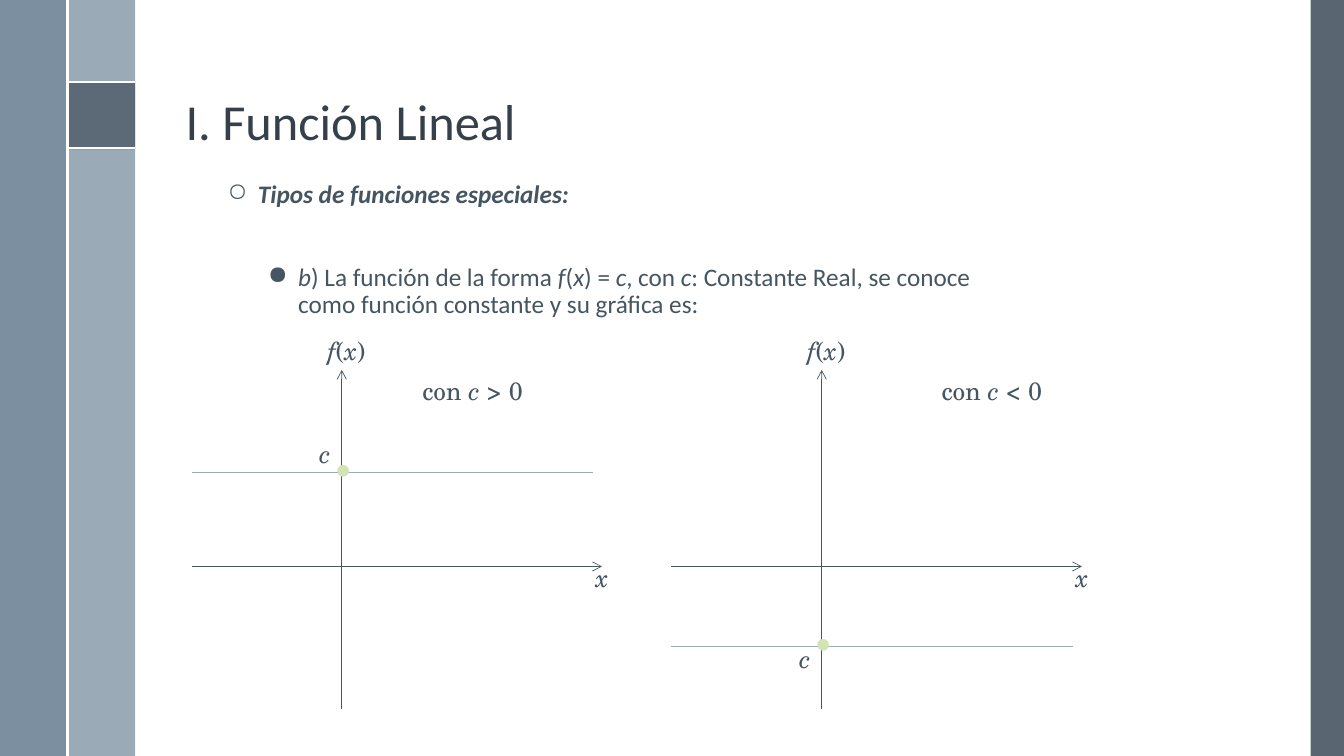
from lxml import etree
from pptx import Presentation
from pptx.dml.color import RGBColor
from pptx.enum.shapes import MSO_CONNECTOR, MSO_SHAPE
from pptx.enum.text import MSO_ANCHOR, PP_ALIGN
from pptx.oxml.ns import qn
from pptx.util import Inches, Pt

# Content: runs are (text, italic)
TITLE = "I. Función Lineal"
HEADING = [("Tipos de funciones especiales:", True)]
STATEMENT = [
    ("b", True), (") La función de la forma ", False), ("f", True), ("(", False),
    ("x", True), (") = ", False), ("c", True), (", con ", False), ("c", True),
    (": Constante Real, se conoce como función constante y su gráfica es:", False),
]
Y_NAME = [("f", True), ("(", False), ("x", True), (")", False)]
X_NAME = [("x", True)]
C_NAME = [("c", True)]
DOT = [("●", False)]
GRAPHS = [
    {"left": 1.9, "sign": " > 0", "constant": 4.69, "c_shift": -0.39, "sign_shift": 2.19},
    {"left": 6.66, "sign": " < 0", "constant": 6.41, "c_shift": -0.08, "sign_shift": 2.58},
]
COLORS = {
    "title": "35404A", "text": "465562", "dark": "475562", "steel": "6A8093",
    "light": "9BAAB7", "dot": "D4E3B4", "white": "FFFFFF",
}
# Bands: left, top, width, height, colour, opacity in percent
BANDS = [
    (13, 0, 0.33, 7.5, "dark", 90),
    (0.67, 0, 0.67, 7.5, "light", 100),
    (0, 0, 0.67, 7.5, "steel", 88),
    (0.67, 0.81, 0.67, 0.67, "dark", 75),
]
BAND_RULES = [(0.67, 0.81, 1.34, 0.81), (0.67, 1.47, 1.34, 1.47), (0.67, 0, 0.67, 7.5)]
PI_OUTLINE = [
    (1.18, 0.98), (0.9, 0.98), (0.86, 1), (0.83, 1.04), (0.84, 1.05), (0.85, 1.05),
    (0.87, 1.02), (0.9, 1.01), (0.94, 1.01), (0.93, 1.14), (0.91, 1.22), (0.88, 1.27),
    (0.88, 1.29), (0.9, 1.29), (0.93, 1.24), (0.95, 1.16), (0.97, 1.01), (1.06, 1.01),
    (1.05, 1.22), (1.05, 1.26), (1.07, 1.29), (1.1, 1.3), (1.12, 1.3), (1.16, 1.28),
    (1.19, 1.22), (1.18, 1.21), (1.16, 1.22), (1.14, 1.26), (1.11, 1.28), (1.08, 1.27),
    (1.07, 1.22), (1.09, 1.01), (1.18, 1.01), (1.19, 1),
]
SANS, SERIF = "Calibri", "TeX Gyre Schola"

prs = Presentation()
prs.slide_width, prs.slide_height = Inches(13.33), Inches(7.5)
slide = prs.slides.add_slide(prs.slide_layouts[5])
shapes = slide.shapes


def color(name):
    return RGBColor.from_string(COLORS[name])


def paint(shape, name, opacity=100):
    shape.shadow.inherit = False
    shape.fill.solid()
    shape.fill.fore_color.rgb = color(name)
    shape.line.fill.background()
    if opacity < 100:
        rgb = shape.fill._xPr.find(".//" + qn("a:srgbClr"))
        etree.SubElement(rgb, qn("a:alpha")).set("val", str(opacity * 1000))


def add_line(x1, y1, x2, y2, name, width, arrow=False):
    line = shapes.add_connector(
        MSO_CONNECTOR.STRAIGHT, Inches(x1), Inches(y1), Inches(x2), Inches(y2))
    line.line.color.rgb = color(name)
    line.line.width = Pt(width)
    if arrow:
        etree.SubElement(line.line._get_or_add_ln(), qn("a:tailEnd")).set("type", "arrow")
    etree.SubElement(line._element.spPr, qn("a:effectLst"))


def write(paragraph, runs, font, name="text", size=18):
    paragraph.font.name = font
    paragraph.font.size = Pt(size)
    paragraph.font.color.rgb = color(name)
    for text, italic in runs:
        run = paragraph.add_run()
        run.text = text
        run.font.italic = italic


def add_label(x, y, width, runs, font=SERIF, name="text", wrap=True):
    frame = shapes.add_textbox(Inches(x), Inches(y), Inches(width), Inches(0.4)).text_frame
    frame.word_wrap = wrap
    write(frame.paragraphs[0], runs, font, name)


def set_bullet(paragraph, char, margin):
    props = paragraph._p.get_or_add_pPr()
    props.set("marL", str(Inches(margin)))
    props.set("indent", str(Inches(-0.3)))
    bullet = etree.Element(qn("a:buChar"))
    bullet.set("char", char)
    defaults = props.find(qn("a:defRPr"))
    defaults.addprevious(bullet)


# Side bands with the pi sign
for left, top, width, height, name, opacity in BANDS:
    band = shapes.add_shape(
        MSO_SHAPE.RECTANGLE, Inches(left), Inches(top), Inches(width), Inches(height))
    paint(band, name, opacity)
for ends in BAND_RULES:
    add_line(*ends, "white", 1.5)
start, *rest = PI_OUTLINE
outline = shapes.build_freeform(*start, scale=Inches(1))
outline.add_line_segments(rest, close=True)
paint(outline.convert_to_shape(), "white")

# Title
title = shapes.title
title.left, title.top = Inches(1.74), Inches(0.19)
title.width, title.height = Inches(10.7), Inches(1.36)
title.text_frame.vertical_anchor = MSO_ANCHOR.BOTTOM
title_line = title.text_frame.paragraphs[0]
title_line.alignment = PP_ALIGN.LEFT
title_line.line_spacing = 0.9
write(title_line, [(TITLE, False)], SANS, "title", 36)

# Explanation
body = shapes.add_textbox(Inches(2.16), Inches(1.75), Inches(8.17), Inches(1.5)).text_frame
body.word_wrap = True
heading, statement = body.paragraphs[0], body.add_paragraph()
for paragraph, runs, char, margin in [
        (heading, HEADING, "○", 0.3), (statement, STATEMENT, "●", 0.7)]:
    paragraph.line_spacing = 0.9
    write(paragraph, runs, SANS)
    set_bullet(paragraph, char, margin)
heading.runs[0].font.bold = True
statement.space_before = Pt(40)

# Graphs of the constant function
for graph in GRAPHS:
    left, constant = graph["left"], graph["constant"]
    axis = left + 1.49
    add_line(left, 5.62, left + 4.07, 5.62, "text", 0.5, arrow=True)
    add_line(axis, 7.03, axis, 3.67, "text", 0.5, arrow=True)
    add_label(axis - 0.24, 3.28, 0.78, Y_NAME)
    add_label(left + 3.91, 5.53, 0.55, X_NAME)
    add_line(left, constant, left + 3.98, constant, "light", 0.5)
    add_label(axis - 0.16, constant - 0.24, 0.35, DOT, SANS, "dot", wrap=False)
    add_label(axis - 0.32, constant + graph["c_shift"], 0.23, C_NAME)
    condition = [("con ", False), ("c", True), (graph["sign"], False)]
    add_label(left + graph["sign_shift"], 3.67, 1.48, condition)

prs.save("out.pptx")
